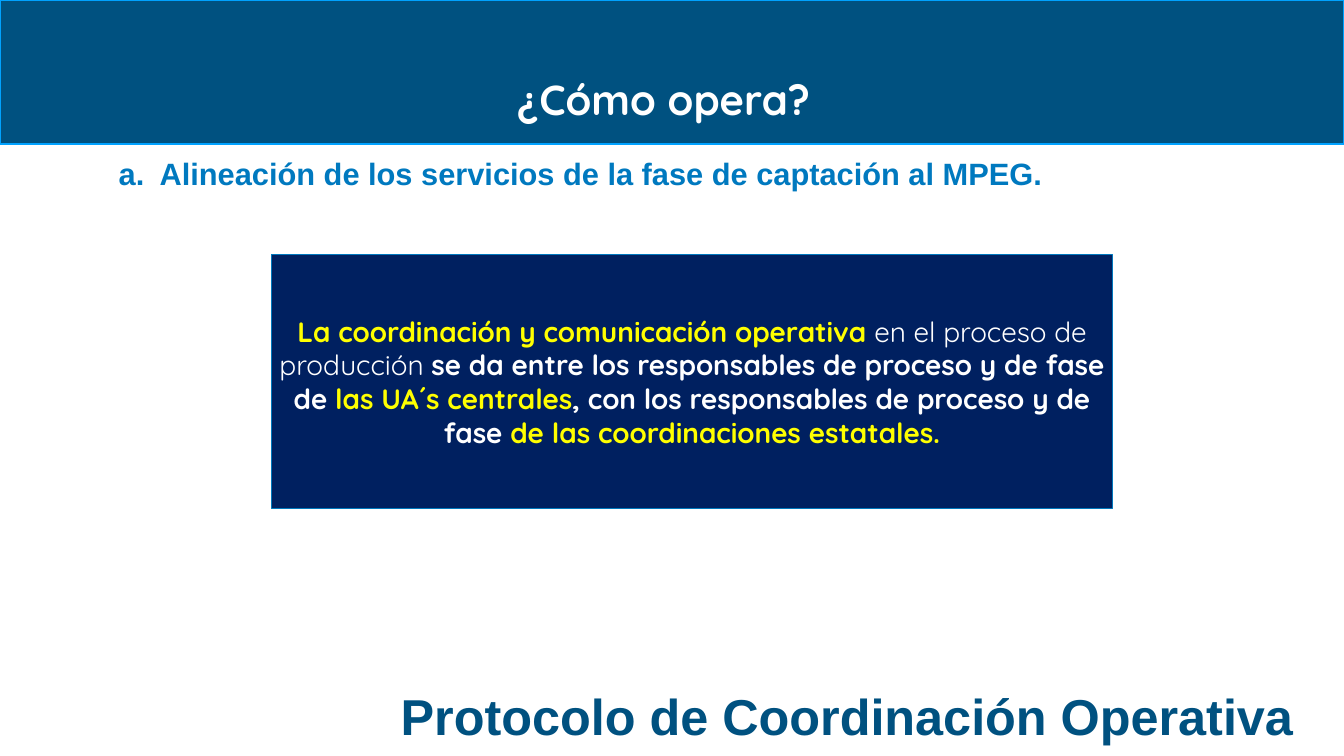
from pptx import Presentation
from pptx.dml.color import RGBColor
from pptx.enum import shapes, text
from pptx.oxml.ns import qn
from pptx.util import Pt

WHITE = RGBColor(0xFF, 0xFF, 0xFF)
YELLOW = RGBColor(0xFF, 0xFF, 0x00)
NAVY = RGBColor(0x00, 0x20, 0x60)
DEEP_BLUE = RGBColor(0x00, 0x51, 0x80)
MID_BLUE = RGBColor(0x00, 0x78, 0xBD)
HEADING_BLUE = RGBColor(0x00, 0x79, 0xBF)
BRIGHT_BLUE = RGBColor(0x00, 0xA2, 0xFF)

presentation = Presentation()
presentation.slide_width, presentation.slide_height = Pt(1920), Pt(1080)
slide = presentation.slides.add_slide(presentation.slide_layouts[6])


def add_panel(left, top, width, height, fill, border):
    panel = slide.shapes.add_shape(
        shapes.MSO_SHAPE.RECTANGLE, Pt(left), Pt(top), Pt(width), Pt(height))
    panel.shadow.inherit = False
    panel.fill.solid()
    panel.fill.fore_color.rgb = fill
    panel.line.color.rgb = border
    panel.line.width = Pt(2)
    return panel


def write_runs(paragraph, font_name, size, runs):
    """Add (wording, colour, bold) runs in one font and size."""
    for wording, colour, bold in runs:
        run = paragraph.add_run()
        run.text = wording
        font_format = {"name": font_name, "size": Pt(size), "bold": bold}
        for attribute, value in font_format.items():
            setattr(run.font, attribute, value)
        run.font.color.rgb = colour


# Central message
message = add_panel(388, 363.5, 1201, 363, NAVY, MID_BLUE).text_frame
message.word_wrap = True
message.vertical_anchor = text.MSO_ANCHOR.MIDDLE
message.paragraphs[0].alignment = text.PP_ALIGN.CENTER
write_runs(message.paragraphs[0], "Quicksand", 40, [
    ("La coordinación y comunicación operativa ", YELLOW, True),
    ("en el proceso de producción ", WHITE, False),
    ("se da entre los responsables de proceso y de fase de ", WHITE, True),
    ("las UA´s centrales", YELLOW, True),
    (", con los responsables de proceso y de fase ", WHITE, True),
    ("de las coordinaciones estatales.", YELLOW, True),
])

# Header band
add_panel(0, 0, 1920, 206, DEEP_BLUE, BRIGHT_BLUE)

# Header question, numbered heading and protocol name
CENTER, LEFT = text.PP_ALIGN.CENTER, text.PP_ALIGN.LEFT
TOP, BOTTOM = text.MSO_ANCHOR.TOP, text.MSO_ANCHOR.BOTTOM
labels = [
    ("¿Cómo opera?", (504.5, 109.5, 887, 73), "Quicksand", 60, WHITE,
     CENTER, TOP, 0.9, False),
    ("Alineación de los servicios de la fase de captación al MPEG.",
     (162.5, 223, 1617, 97), "Arial", 44, HEADING_BLUE, LEFT, TOP, 0.9, True),
    ("Protocolo de Coordinación Operativa", (521, 975, 1379, 94), "Arial", 72,
     DEEP_BLUE, CENTER, BOTTOM, 1.0, False),
]
for wording, place, font_name, size, colour, align, anchor, spacing, numbered in labels:
    label = slide.shapes.add_textbox(*map(Pt, place)).text_frame
    label.word_wrap = True
    label.vertical_anchor = anchor
    paragraph = label.paragraphs[0]
    paragraph.alignment = align
    paragraph.line_spacing = spacing
    if numbered:
        properties = paragraph._p.get_or_add_pPr()
        properties.set("marL", str(Pt(58.5)))
        properties.set("indent", str(-Pt(58.5)))
        numbering = properties.makeelement(qn("a:buAutoNum"), {"type": "alphaLcPeriod"})
        properties.append(numbering)
    write_runs(paragraph, font_name, size, [(wording, colour, True)])

presentation.save("out.pptx")
